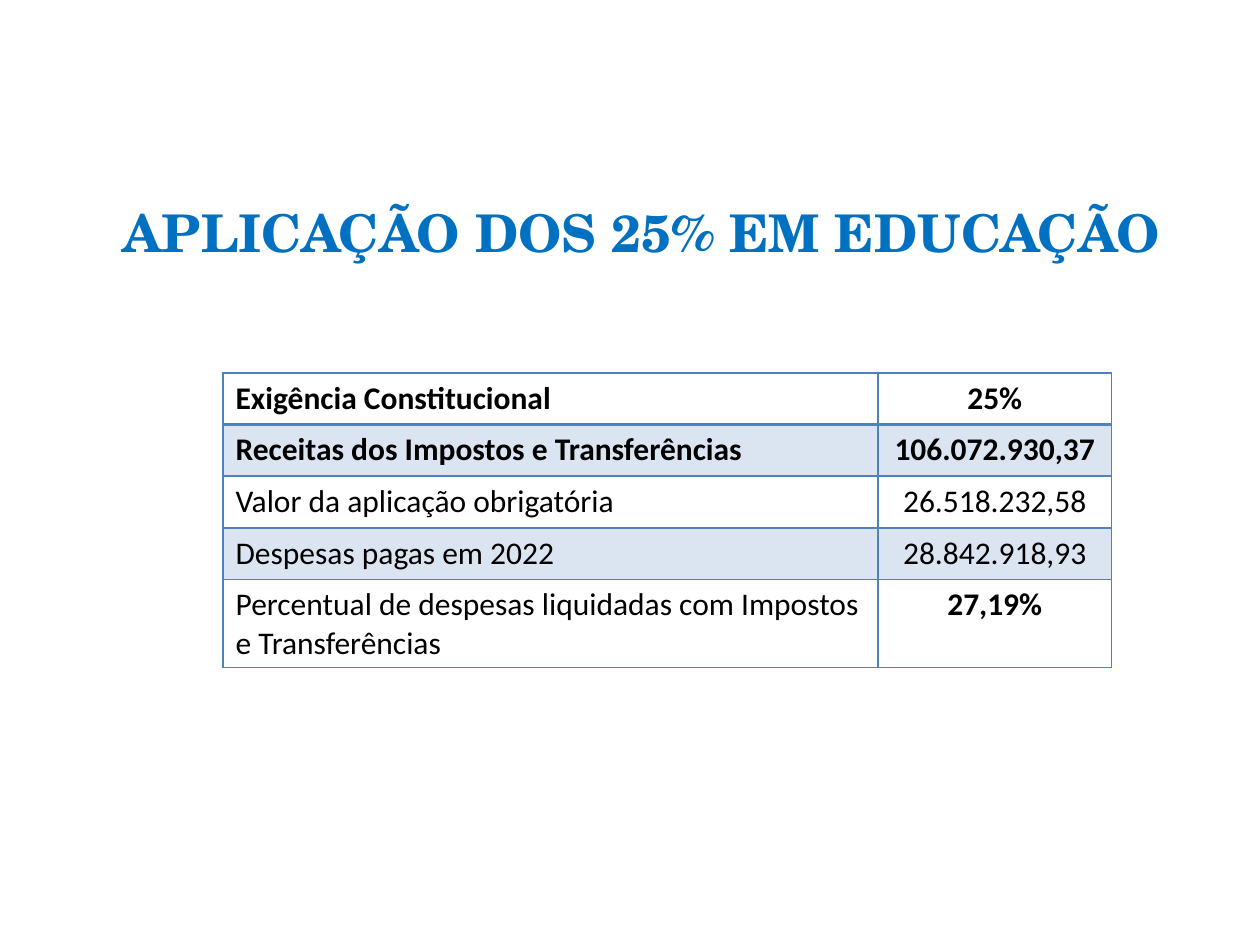
from dataclasses import dataclass

from lxml import etree
from pptx import Presentation
from pptx import util as u
from pptx.dml.color import RGBColor
from pptx.enum import text
from pptx.oxml import ns


@dataclass(frozen=True)
class Theme:
    title_font: str = "TeX Gyre Schola"
    body_font: str = "Calibri"
    title_size: float = 29.7
    body_size: float = 18
    title_color: str = "0070C0"
    body_color: str = "000000"
    accent: str = "4F81BD"
    band_alpha: int = 20
    border: float = 1
    header_border: float = 2


@dataclass(frozen=True)
class BudgetRow:
    label: str
    value: str
    label_bold: bool = False
    value_bold: bool = False


THEME = Theme()
ROWS = [
    BudgetRow("Exigência Constitucional", "25%", True, True),
    BudgetRow("Receitas dos Impostos e Transferências", "106.072.930,37", True, True),
    BudgetRow("Valor da aplicação obrigatória", "26.518.232,58"),
    BudgetRow("Despesas pagas em 2022", "28.842.918,93"),
    BudgetRow(
        "Percentual de despesas liquidadas com Impostos e Transferências",
        "27,19%",
        value_bold=True,
    ),
]
COLUMN_WIDTHS = (5.2, 1.85)
ROW_HEIGHT = 0.41


def add_run(paragraph, content: str, font: str, size: float, color: str, bold: bool) -> None:
    run = paragraph.add_run()
    run.text = content
    run.font.name = font
    run.font.size = u.Pt(size)
    run.font.bold = bold
    run.font.color.rgb = RGBColor.from_string(color)


def add_title(slide, content: str) -> None:
    shape = slide.shapes.add_textbox(
        u.Inches(0.59), u.Inches(0.76), u.Inches(9), u.Inches(1.5)
    )
    frame = shape.text_frame
    frame.word_wrap = True
    frame.vertical_anchor = text.MSO_ANCHOR.BOTTOM
    frame.margin_bottom = u.Inches(0.17)
    paragraph = frame.paragraphs[0]
    paragraph.alignment = text.PP_ALIGN.CENTER
    add_run(paragraph, content, THEME.title_font, THEME.title_size, THEME.title_color, True)


def add_solid_fill(parent, color: str):
    fill = etree.SubElement(parent, ns.qn("a:solidFill"))
    return etree.SubElement(fill, ns.qn("a:srgbClr"), val=color)


def style_cell(cell, top: float, bottom: float, banded: bool) -> None:
    properties = cell._tc.get_or_add_tcPr()
    borders = {"lnL": THEME.border, "lnR": THEME.border, "lnT": top, "lnB": bottom}
    for side, width in borders.items():
        line = etree.SubElement(properties, ns.qn(f"a:{side}"), w=str(u.Pt(width)))
        add_solid_fill(line, THEME.accent)
    if banded:
        color = add_solid_fill(properties, THEME.accent)
        etree.SubElement(color, ns.qn("a:alpha"), val=str(THEME.band_alpha * 1000))
    else:
        cell.fill.background()


def add_budget_table(slide, rows: list[BudgetRow]) -> None:
    table = slide.shapes.add_table(
        len(rows), len(COLUMN_WIDTHS), u.Inches(1.77), u.Inches(2.96),
        u.Inches(sum(COLUMN_WIDTHS)), u.Inches(ROW_HEIGHT * len(rows)),
    ).table
    table.horz_banding = False
    table.first_row = False
    for column, width in zip(table.columns, COLUMN_WIDTHS):
        column.width = u.Inches(width)
    for index, row in enumerate(rows):
        table.rows[index].height = u.Inches(ROW_HEIGHT)
        top = THEME.header_border if index == 1 else THEME.border
        bottom = THEME.header_border if index == 0 else THEME.border
        contents = (
            (row.label, row.label_bold, text.PP_ALIGN.LEFT),
            (row.value, row.value_bold, text.PP_ALIGN.CENTER),
        )
        for column, (content, bold, alignment) in enumerate(contents):
            cell = table.cell(index, column)
            style_cell(cell, top, bottom, index % 2 == 1)
            paragraph = cell.text_frame.paragraphs[0]
            paragraph.alignment = alignment
            add_run(paragraph, content, THEME.body_font, THEME.body_size, THEME.body_color, bold)


def main() -> None:
    presentation = Presentation()
    presentation.slide_width = u.Inches(10)
    presentation.slide_height = u.Inches(7.5)
    slide = presentation.slides.add_slide(presentation.slide_layouts[6])
    add_title(slide, "APLICAÇÃO DOS 25% EM EDUCAÇÃO")
    add_budget_table(slide, ROWS)
    presentation.save("out.pptx")


if __name__ == "__main__":
    main()
